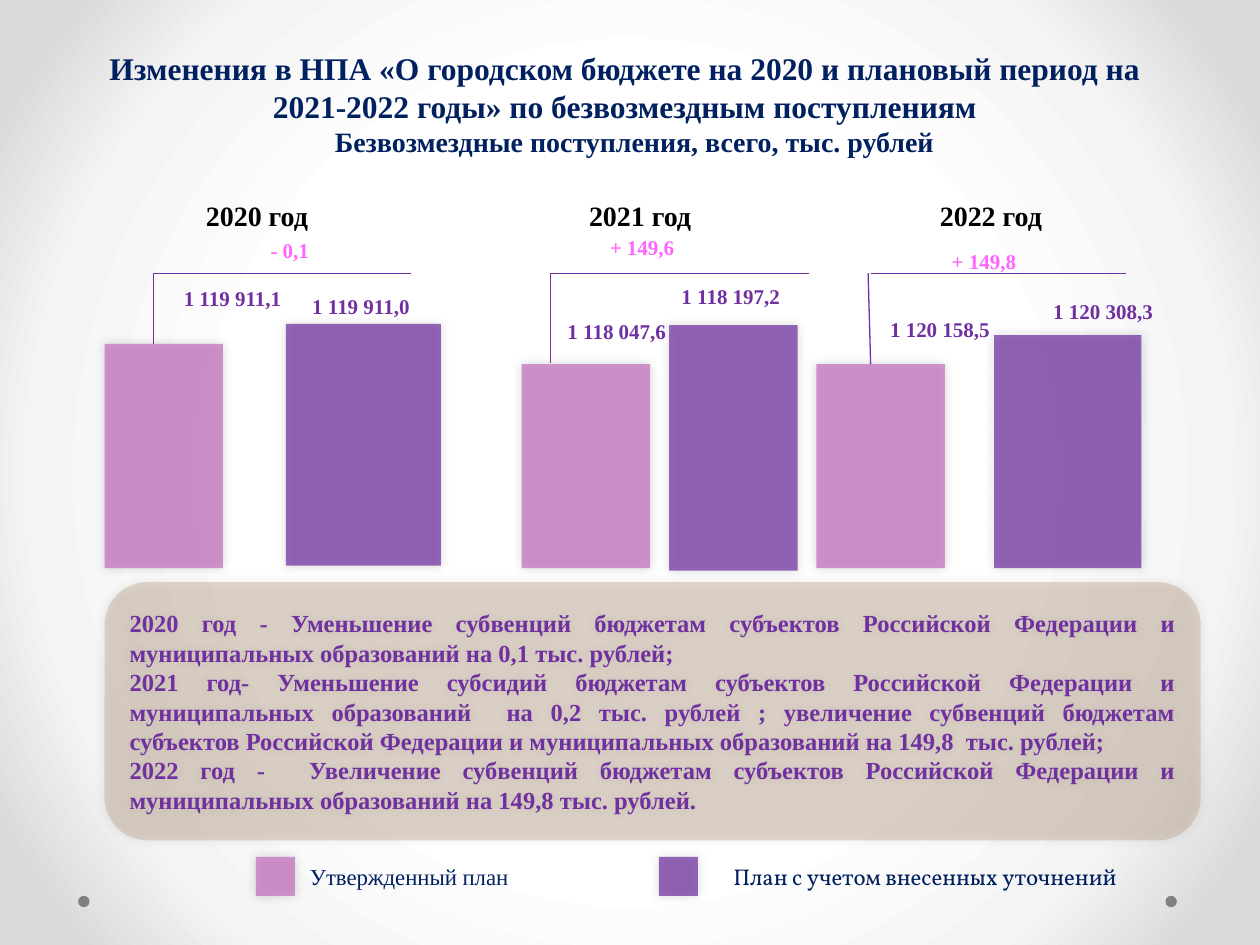
import pptx
import pptx.util
import pptx.dml.color
import pptx.enum.shapes
import pptx.enum.text
import pptx.oxml
import pptx.oxml.ns
from lxml import etree

Inches, Pt = pptx.util.Inches, pptx.util.Pt
SHAPE = pptx.enum.shapes.MSO_SHAPE
ALIGN = pptx.enum.text.PP_ALIGN
ANCHOR = pptx.enum.text.MSO_ANCHOR
NS = pptx.oxml.ns.nsdecls("a", "p")
FONT = "Times New Roman"
C = {"navy": "002060", "purple": "7030A0", "lilac": "C77BC3", "pink": "FF66FF",
     "black": "000000", "sand": "BEA388", "dot": "808080"}
PLAN, REVISED = ("lilac", 80), ("purple", 72)
BRACKET_Y = 0.62

# Boxes are left, top, width, height from the top left corner of the year's region.
# The stem is top x, bottom x, bottom y.
YEARS = [
    dict(left=0.83, year=("2020 год", (0.39, 0, 1.64, 0.31)),
         change=("- 0,1", (0.73, 0.31, 1.48, 0.25)),
         bars=[(0, 1.18, 0.94, 1.78), (1.44, 1.02, 1.23, 1.92)],
         values=[("1 119 911,1", (0.51, 0.74, 1.01, 0.16)),
                 ("1 119 911,0", (1.47, 0.74, 1.13, 0.28))],
         stem=(0.39, 0.39, 1.18), right=2.43),
    dict(left=4.14, year=("2021 год", (0.23, 0, 1.42, 0.31)),
         change=("+ 149,6", (0.26, 0.31, 1.39, 0.21)),
         bars=[(0, 1.34, 1.02, 1.62), (1.17, 1.03, 1.02, 1.95)],
         values=[("1 118 047,6", (0.26, 0.98, 0.99, 0.2)),
                 ("1 118 197,2", (1.04, 0.62, 1.24, 0.36))],
         stem=(0.23, 0.23, 1.33), right=2.28),
    dict(left=6.48, year=("2022 год", (0.65, 0, 1.47, 0.31)),
         change=("+ 149,8", (0.8, 0.42, 1.06, 0.21)),
         bars=[(0, 1.34, 1.02, 1.62), (1.41, 1.11, 1.17, 1.85)],
         values=[("1 120 158,5", (0.47, 0.95, 1.02, 0.23)),
                 ("1 120 308,3", (1.65, 0.72, 1.25, 0.39))],
         stem=(0.41, 0.43, 1.34), right=2.46),
]
NOTES = [
    "2020 год - Уменьшение субвенций бюджетам субъектов Российской Федерации и "
    "муниципальных образований на 0,1 тыс. рублей;",
    "2021 год- Уменьшение субсидий бюджетам субъектов Российской Федерации и "
    "муниципальных образований  на 0,2 тыс. рублей ; увеличение субвенций бюджетам "
    "субъектов Российской Федерации и муниципальных образований на 149,8  тыс. рублей;",
    "2022 год -  Увеличение субвенций бюджетам субъектов Российской Федерации и "
    "муниципальных образований на 149,8 тыс. рублей.",
]


def rgb(name):
    return pptx.dml.color.RGBColor.from_string(C[name])


def lengths(box):
    return [Inches(v) for v in box]


def shift(box, x, y):
    return (box[0] + x, box[1] + y, box[2], box[3])


def write(sp, text, size, color, bold=True, align=ALIGN.CENTER, font=FONT, inset=0,
          anchor=ANCHOR.MIDDLE):
    tf = sp.text_frame
    tf.text = text
    tf.word_wrap = True
    tf.auto_size = pptx.enum.text.MSO_AUTO_SIZE.NONE
    tf.vertical_anchor = anchor
    tf.margin_left = tf.margin_right = Inches(inset)
    tf.margin_top = tf.margin_bottom = 0
    for p in tf.paragraphs:
        p.alignment = align
        for r in p.runs:
            r.font.size, r.font.bold, r.font.name = Pt(size), bold, font
            r.font.color.rgb = rgb(color)


def add_label(s, box, *args, **kwargs):
    write(s.shapes.add_textbox(*lengths(box)), *args, **kwargs)


def add_block(s, kind, box, color, opacity):
    """Add a translucent, unlined shape with a soft glow-like shadow."""
    sp = s.shapes.add_shape(kind, *lengths(box))
    sp.fill.solid()
    sp.fill.fore_color.rgb = rgb(color)
    sp.line.fill.background()
    clr = sp._element.spPr.find(".//" + pptx.oxml.ns.qn("a:srgbClr"))
    etree.SubElement(clr, pptx.oxml.ns.qn("a:alpha"), val=str(opacity * 1000))
    sp._element.spPr.append(pptx.oxml.parse_xml(
        f'<a:effectLst {NS}><a:outerShdw blurRad="{Pt(6)}" dist="0" dir="18900000">'
        '<a:srgbClr val="000000"><a:alpha val="20000"/></a:srgbClr>'
        '</a:outerShdw></a:effectLst>'))
    return sp


def add_line(s, x1, y1, x2, y2):
    ln = s.shapes.add_connector(pptx.enum.shapes.MSO_CONNECTOR.STRAIGHT,
                                *lengths((x1, y1, x2, y2)))
    ln.line.color.rgb = rgb("purple")
    ln.line.width = Pt(0.75)
    etree.SubElement(ln._element.spPr, pptx.oxml.ns.qn("a:effectLst"))


def add_background(s):
    stops = "".join(f'<a:gs pos="{pos * 1000}"><a:srgbClr val="{color}"/></a:gs>'
                    for pos, color in [(50, "FFFFFF"), (76, "F4F4F4"), (92, "DADADA")])
    s._element.cSld.insert(0, pptx.oxml.parse_xml(
        f'<p:bg {NS}><p:bgPr><a:gradFill><a:gsLst>{stops}</a:gsLst><a:path path="circle">'
        '<a:fillToRect l="50000" t="50000" r="50000" b="50000"/></a:path></a:gradFill>'
        '<a:effectLst/></p:bgPr></p:bg>'))
    for x in (0.62, 9.25):
        sp = s.shapes.add_shape(SHAPE.OVAL, *lengths((x, 7.11, 0.09, 0.09)))
        sp.shadow.inherit = False
        sp.fill.solid()
        sp.fill.fore_color.rgb = rgb("dot")
        sp.line.fill.background()


def add_heading(s, x, y):
    title = s.shapes.title
    title.left, title.top, title.width, title.height = lengths((x, y, 8.52, 0.63))
    write(title, "Изменения в НПА «О городском бюджете на 2020 и плановый период на "
          "2021-2022 годы» по безвозмездным поступлениям", 18, "navy", inset=0.1,
          anchor=ANCHOR.TOP)
    title.text_frame.margin_top = Inches(0.08)
    add_label(s, (x + 0.78, y + 0.63, 7.11, 0.37),
              "Безвозмездные поступления, всего, тыс. рублей", 16, "navy")


def add_year(s, x, y, data):
    for bar, style in zip(data["bars"], (PLAN, REVISED)):
        add_block(s, SHAPE.RECTANGLE, shift(bar, x, y), *style)
    top_x, bottom_x, bottom_y = data["stem"]
    add_line(s, x + bottom_x, y + bottom_y, x + top_x, y + BRACKET_Y)
    add_line(s, x + bottom_x, y + BRACKET_Y, x + data["right"], y + BRACKET_Y)
    labels = [(data["year"], 16, "black"), (data["change"], 12, "pink")]
    labels += [(value, 12, "purple") for value in data["values"]]
    for (text, box), size, color in labels:
        add_label(s, shift(box, x, y), text, size, color)


def add_notes_panel(s, box):
    sp = add_block(s, SHAPE.ROUNDED_RECTANGLE, box, "sand", 39)
    write(sp, "\n".join(NOTES), 14, "purple", align=ALIGN.JUSTIFY, inset=0.1)


def add_legend_item(s, x, y, style, text, gap, width, font):
    add_block(s, SHAPE.RECTANGLE, (x, y + 0.08, 0.31, 0.31), *style)
    add_label(s, (x + gap, y, width, 0.47), text, 13, "navy", bold=False,
              align=ALIGN.LEFT, font=font, inset=0.12)


def main():
    prs = pptx.Presentation()
    prs.slide_width, prs.slide_height = Inches(10), Inches(7.5)
    s = prs.slides.add_slide(prs.slide_layouts[5])
    add_background(s)
    add_notes_panel(s, (0.83, 4.62, 8.7, 2.05))
    add_heading(s, 0.7, 0.31)
    for data in YEARS:
        add_year(s, data["left"], 1.55, data)
    add_legend_item(s, 2.03, 6.72, PLAN, "Утвержденный план", 0.31, 3.05, FONT)
    add_legend_item(s, 5.23, 6.72, REVISED, "План с учетом внесенных уточнений",
                    0.47, 3.83, "Vollkorn")
    prs.save("out.pptx")


if __name__ == "__main__":
    main()
